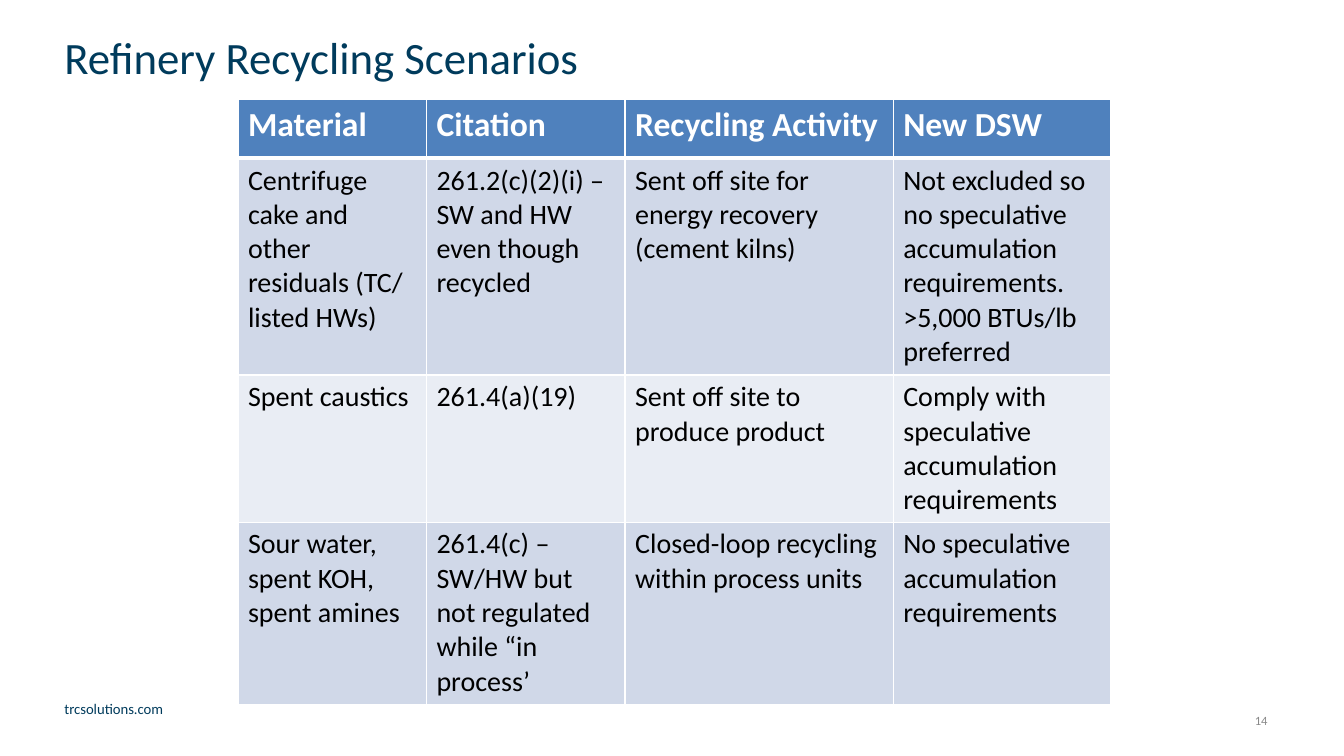
import pptx
import pptx.dml.color
import pptx.enum.text
import pptx.util
import lxml.etree
from pptx.oxml.ns import qn

PX = 9144
FONT = "Calibri"
COLORS = {
    "navy": "003B5C",
    "gray": "898989",
    "header": "4F81BD",
    "band_dark": "D0D8E8",
    "band_light": "E9EDF4",
    "white": "FFFFFF",
    "black": "000000",
}
COLUMN_WIDTHS = [187, 197, 266, 216]
ROW_HEIGHTS = [58, 215, 146, 181]
SCENARIOS = [
    ["Material", "Citation", "Recycling Activity", "New DSW"],
    [
        "Centrifuge cake and other residuals (TC/ listed HWs)",
        "261.2(c)(2)(i) – SW and HW even though recycled",
        "Sent off site for energy recovery (cement kilns)",
        "Not excluded so no speculative accumulation requirements. >5,000 BTUs/lb preferred",
    ],
    [
        "Spent caustics",
        "261.4(a)(19)",
        "Sent off site to produce product",
        "Comply with speculative accumulation requirements",
    ],
    [
        "Sour water, spent KOH, spent amines",
        "261.4(c) – SW/HW but not regulated while “in process’",
        "Closed-loop recycling within process units",
        "No speculative accumulation requirements",
    ],
]


def px(n):
    """Turn px into EMU."""
    return pptx.util.Emu(n * PX)


def rgb(name):
    """Look up a named colour."""
    return pptx.dml.color.RGBColor.from_string(COLORS[name])


def add_run(p, text, size, color, bold=False):
    """Add one formatted run to a paragraph."""
    r = p.add_run()
    r.text = text
    r.font.name = FONT
    r.font.size = pptx.util.Pt(size)
    r.font.bold = bold
    r.font.color.rgb = rgb(color)


def add_label(s, box, text, size, color, align="LEFT", anchor="TOP"):
    """Place a single-line text box in the given box."""
    tf = s.shapes.add_textbox(*map(px, box)).text_frame
    tf.word_wrap = True
    tf.vertical_anchor = pptx.enum.text.MSO_ANCHOR[anchor]
    p = tf.paragraphs[0]
    p.alignment = pptx.enum.text.PP_ALIGN[align]
    add_run(p, text, size, color)


def add_borders(cell, widths):
    """Draw white cell borders with a width in points per side."""
    tcPr = cell._tc.get_or_add_tcPr()
    for side, width in widths.items():
        ln = lxml.etree.SubElement(tcPr, qn(f"a:ln{side}"), w=str(pptx.util.Pt(width)))
        fill = lxml.etree.SubElement(ln, qn("a:solidFill"))
        lxml.etree.SubElement(fill, qn("a:srgbClr"), val=COLORS["white"])


def add_scenarios(s, left, top):
    """Place the recycling scenarios table from its top left corner."""
    size = (sum(COLUMN_WIDTHS), sum(ROW_HEIGHTS))
    frame = s.shapes.add_table(
        len(SCENARIOS), len(COLUMN_WIDTHS), *map(px, (left, top, *size))
    )
    table = frame.table
    for column, width in zip(table.columns, COLUMN_WIDTHS):
        column.width = px(width)
    for i, (row, height) in enumerate(zip(table.rows, ROW_HEIGHTS)):
        row.height = px(height)
        header = i == 0
        fill = "header" if header else "band_dark" if i % 2 else "band_light"
        widths = {"L": 1, "R": 1, "T": 3 if i == 1 else 1, "B": 3 if header else 1}
        for cell, text in zip(row.cells, SCENARIOS[i]):
            add_borders(cell, widths)
            cell.fill.solid()
            cell.fill.fore_color.rgb = rgb(fill)
            p = cell.text_frame.paragraphs[0]
            if header:
                add_run(p, text, 24, "white", bold=True)
            else:
                add_run(p, text, 20, "black")


def add_footer(s, top):
    """Place the web address and the page number at the foot."""
    add_label(s, (54, top, 221, 28), "trcsolutions.com", 10.5, "navy")
    add_label(s, (956, top + 6, 311, 40), "14", 9, "gray", "RIGHT", "MIDDLE")


def main():
    """Build and save the slide."""
    prs = pptx.Presentation()
    prs.slide_width, prs.slide_height = px(1333), px(750)
    s = prs.slides.add_slide(prs.slide_layouts[6])
    add_footer(s, 689)
    add_label(s, (54, 25, 1038, 74), "Refinery Recycling Scenarios", 32, "navy")
    add_scenarios(s, 236, 99)
    prs.save("out.pptx")


if __name__ == "__main__":
    main()
